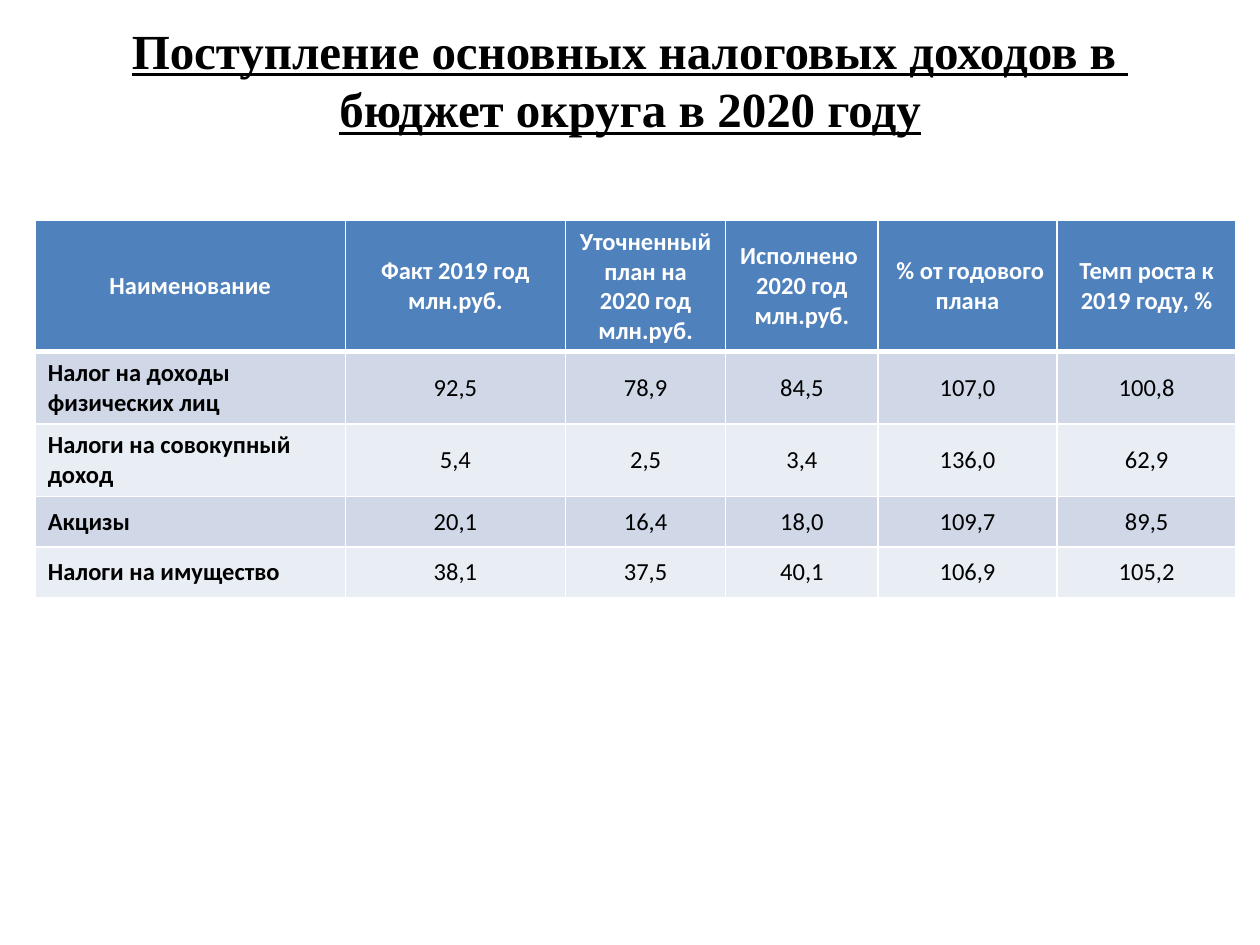
from lxml.etree import SubElement as Sub
from pptx import Presentation
from pptx.dml.color import RGBColor as RGB
from pptx.enum.text import MSO_ANCHOR as Anchor, PP_ALIGN as Align
from pptx.oxml.ns import qn
from pptx.util import Cm, Pt

BLACK = RGB(0x00, 0x00, 0x00)
WHITE = RGB(0xFF, 0xFF, 0xFF)
BLUE = RGB(0x4F, 0x81, 0xBD)
BANDS = RGB(0xD0, 0xD8, 0xE8), RGB(0xE9, 0xED, 0xF4)

TITLE = "Поступление основных налоговых доходов в  бюджет округа в 2020 году"
ROWS = [
    ("Наименование", "Факт 2019 год млн.руб.", "Уточненный план на 2020 год млн.руб.",
     "Исполнено  2020 год млн.руб.", " % от годового плана", "Темп роста к 2019 году, %"),
    ("Налог на доходы физических лиц", "92,5", "78,9", "84,5", "107,0", "100,8"),
    ("Налоги на совокупный доход", "5,4", "2,5", "3,4", "136,0", "62,9"),
    ("Акцизы", "20,1", "16,4", "18,0", "109,7", "89,5"),
    ("Налоги на имущество", "38,1", "37,5", "40,1", "106,9", "105,2"),
]
WIDTHS = 6.25, 4.44, 3.23, 3.07, 3.61, 3.61
HEIGHTS = 2.64, 1.46, 1.46, 1.02, 1.02


def write(frame, text, font="Calibri", size=14, color=BLACK, bold=False,
          line=False, align=Align.CENTER):
    frame.word_wrap = True
    frame.vertical_anchor = Anchor.MIDDLE
    para = frame.paragraphs[0]
    para.alignment = align
    run = para.add_run()
    run.text = text
    run.font.name = font
    run.font.size = Pt(size)
    run.font.color.rgb = color
    run.font.bold = bold
    run.font.underline = line


def edge(cell, top, bottom):
    """Draw white borders; top and bottom are widths in points."""
    props = cell._tc.get_or_add_tcPr()
    sides = ("lnL", 1), ("lnR", 1), ("lnT", top), ("lnB", bottom)
    for pos, (side, width) in enumerate(sides):
        line = Sub(props, qn(f"a:{side}"), w=str(Pt(width)))
        fill = Sub(line, qn("a:solidFill"))
        Sub(fill, qn("a:srgbClr"), val=str(WHITE))
        props.insert(pos, line)  # borders precede the fill


def add_title(slide):
    box = slide.shapes.add_textbox(Cm(1.27), Cm(0), Cm(22.86), Cm(3.18))
    write(box.text_frame, TITLE, font="Times New Roman", size=28, bold=True, line=True)


def add_grid(slide):
    table = slide.shapes.add_table(
        len(ROWS), len(WIDTHS), Cm(0.71), Cm(4.45),
        Cm(sum(WIDTHS)), Cm(sum(HEIGHTS))).table
    for col, width in zip(table.columns, WIDTHS):
        col.width = Cm(width)
    for row, height in zip(table.rows, HEIGHTS):
        row.height = Cm(height)

    for i, texts in enumerate(ROWS):
        head = i == 0
        for j, text in enumerate(texts):
            cell = table.cell(i, j)
            cell.fill.solid()
            cell.fill.fore_color.rgb = BLUE if head else BANDS[(i - 1) % 2]
            cell.vertical_anchor = Anchor.MIDDLE
            label = j == 0 and not head
            write(cell.text_frame, text, color=WHITE if head else BLACK,
                  bold=head or label, align=Align.LEFT if label else Align.CENTER)
            edge(cell, top=3 if i == 1 else 1, bottom=3 if head else 1)


def main():
    deck = Presentation()
    deck.slide_width, deck.slide_height = Cm(25.4), Cm(19.05)
    slide = deck.slides.add_slide(deck.slide_layouts[6])
    add_title(slide)
    add_grid(slide)
    deck.save("out.pptx")


if __name__ == "__main__":
    main()
